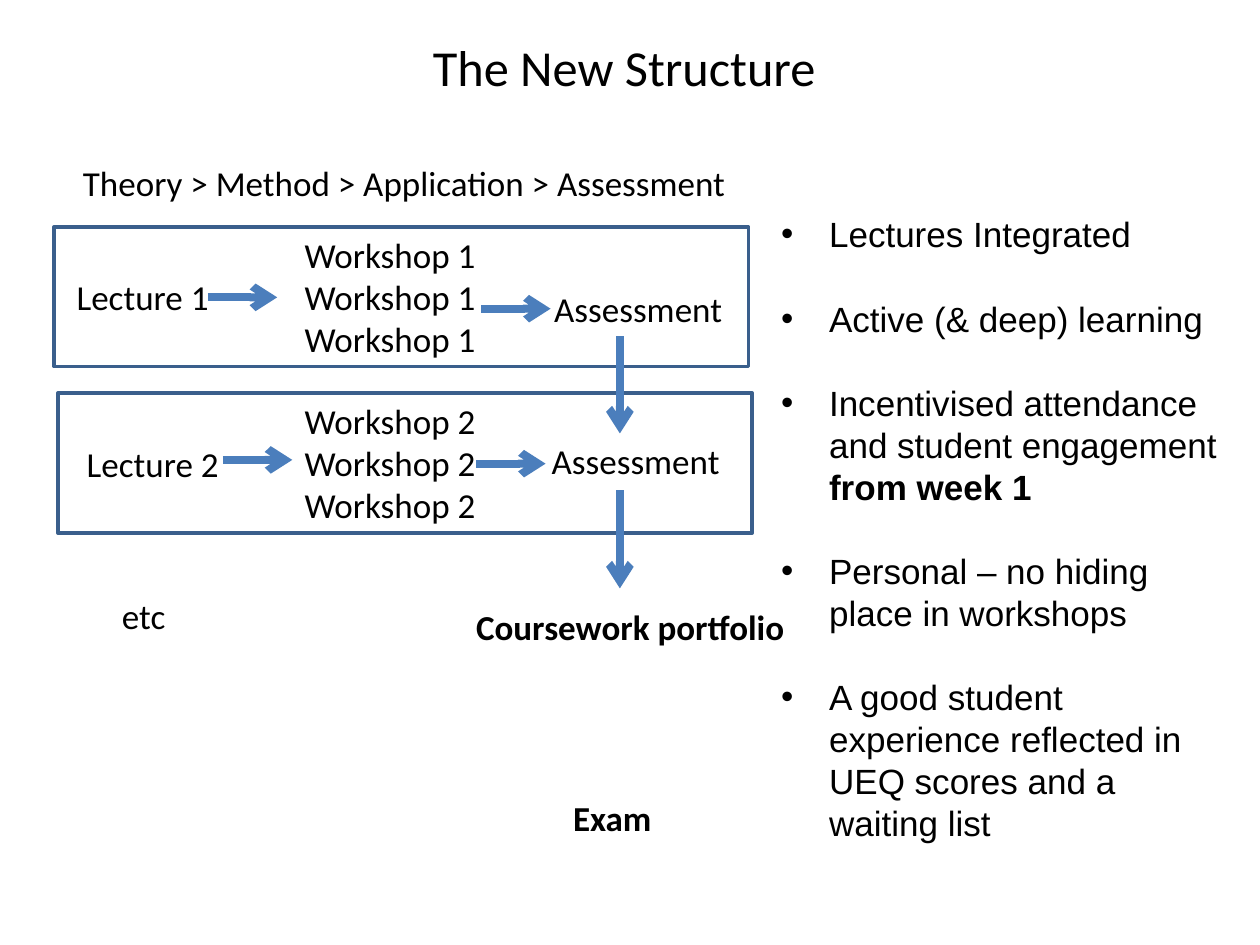
from pptx import Presentation
from pptx.dml.color import RGBColor
from pptx.enum.shapes import MSO_CONNECTOR, MSO_SHAPE
from pptx.enum.text import MSO_ANCHOR, MSO_AUTO_SIZE, PP_ALIGN
from pptx.oxml.ns import qn
from pptx.util import Inches, Pt
from lxml.etree import SubElement

BLACK = RGBColor(0x00, 0x00, 0x00)
FRAME_BLUE = RGBColor(0x3A, 0x5F, 0x8C)
ARROW_BLUE = RGBColor(0x4B, 0x7E, 0xBC)

prs = Presentation()
prs.slide_width, prs.slide_height = Inches(10), Inches(7.5)
COL = prs.slide_width // 100
ROW = prs.slide_height // 75
slide = prs.slides.add_slide(prs.slide_layouts[1])


def grid(left, top, width, height):
    return int(left * COL), int(top * ROW), int(width * COL), int(height * ROW)


def add_label(text, left, top, width, height=4.4, bold=False):
    frame = slide.shapes.add_textbox(*grid(left, top, width, height)).text_frame
    frame.word_wrap = True
    frame.text = text
    for paragraph in frame.paragraphs:
        font = paragraph.runs[0].font
        font.name, font.size, font.bold = "Calibri", Pt(20), bold
        font.color.rgb = BLACK


heading = slide.shapes.title
heading.left, heading.top, heading.width, heading.height = grid(5, 3, 90, 4.6)
heading.text_frame.text = "The New Structure "
heading.text_frame.vertical_anchor = MSO_ANCHOR.MIDDLE
heading.text_frame.auto_size = MSO_AUTO_SIZE.NONE
heading_line = heading.text_frame.paragraphs[0]
heading_line.alignment = PP_ALIGN.CENTER
heading_font = heading_line.runs[0].font
heading_font.name, heading_font.size = "Calibri", Pt(28.8)
heading_font.color.rgb = BLACK

benefits = [
    ["Lectures Integrated"],
    ["Active (& deep) learning"],
    ["Incentivised attendance and student engagement ", "from week 1"],
    ["Personal – no hiding place in workshops"],
    ["A good student experience reflected in UEQ scores and a waiting list"],
]
benefit_list = slide.placeholders[1]
benefit_list.left, benefit_list.top, benefit_list.width, benefit_list.height = grid(61, 16.4, 37, 58.3)
benefit_frame = benefit_list.text_frame
benefit_frame.auto_size = MSO_AUTO_SIZE.NONE
benefit_frame.vertical_anchor = MSO_ANCHOR.TOP
for index, parts in enumerate(benefits):
    paragraph = benefit_frame.paragraphs[0] if index == 0 else benefit_frame.add_paragraph()
    paragraph.line_spacing = Pt(24)
    paragraph.space_before = Pt(24 if index else 0)
    properties = paragraph._p.get_or_add_pPr()
    properties.set("marL", str(Inches(0.38)))
    properties.set("indent", str(-Inches(0.38)))
    SubElement(properties, qn("a:buFont")).set("typeface", "Arial")
    SubElement(properties, qn("a:buChar")).set("char", "•")
    for part_index, part in enumerate(parts):
        run = paragraph.add_run()
        run.text = part
        run.font.name, run.font.size, run.font.bold = "Arial", Pt(20), part_index > 0
        run.font.color.rgb = BLACK

add_label("Theory > Method > Application > Assessment", 5.6, 12.3, 62.4)

weeks = [
    (1, 18, 4.3, 5.1, 21.4, 43, 22.3),
    (2, 31.2, 4.6, 5.9, 34.6, 42.8, 34.4),
]
for week, top, frame_left, lecture_left, lecture_top, assessment_left, assessment_top in weeks:
    week_frame = slide.shapes.add_shape(MSO_SHAPE.RECTANGLE, *grid(frame_left, top, 55.1, 11.1))
    week_frame.shadow.inherit = False
    week_frame.fill.background()
    week_frame.line.color.rgb = FRAME_BLUE
    week_frame.line.width = Pt(2)
    add_label(f"Lecture {week}", lecture_left, lecture_top, 13.4)
    add_label("\n".join([f"Workshop {week}"] * 3), 23.2, top, 15.7, 11.1)
    add_label("Assessment", assessment_left, assessment_top, 16.5)

arrows = [
    (16.5, 23.6, 5.5, 0),
    (38.2, 24.5, 5.5, 0),
    (17.7, 36.5, 5.5, 0),
    (37.8, 36.8, 5.5, 0),
    (49.2, 26.7, 0, 7.7),
    (49.2, 38.9, 0, 7.8),
]
for left, top, across, down in arrows:
    arrow = slide.shapes.add_connector(
        MSO_CONNECTOR.STRAIGHT, *grid(left, top, left + across, top + down)
    )
    arrow.line.color.rgb = ARROW_BLUE
    arrow.line.width = Pt(4.5)
    SubElement(arrow.line._get_or_add_ln(), qn("a:tailEnd")).set("type", "arrow")
    SubElement(arrow._element.spPr, qn("a:effectLst"))

add_label("etc", 8.7, 46.7, 13.4)
add_label("Coursework portfolio", 36.8, 47.6, 31.8, bold=True)
add_label("Exam", 44.5, 62.7, 10.6, bold=True)

prs.save("out.pptx")
